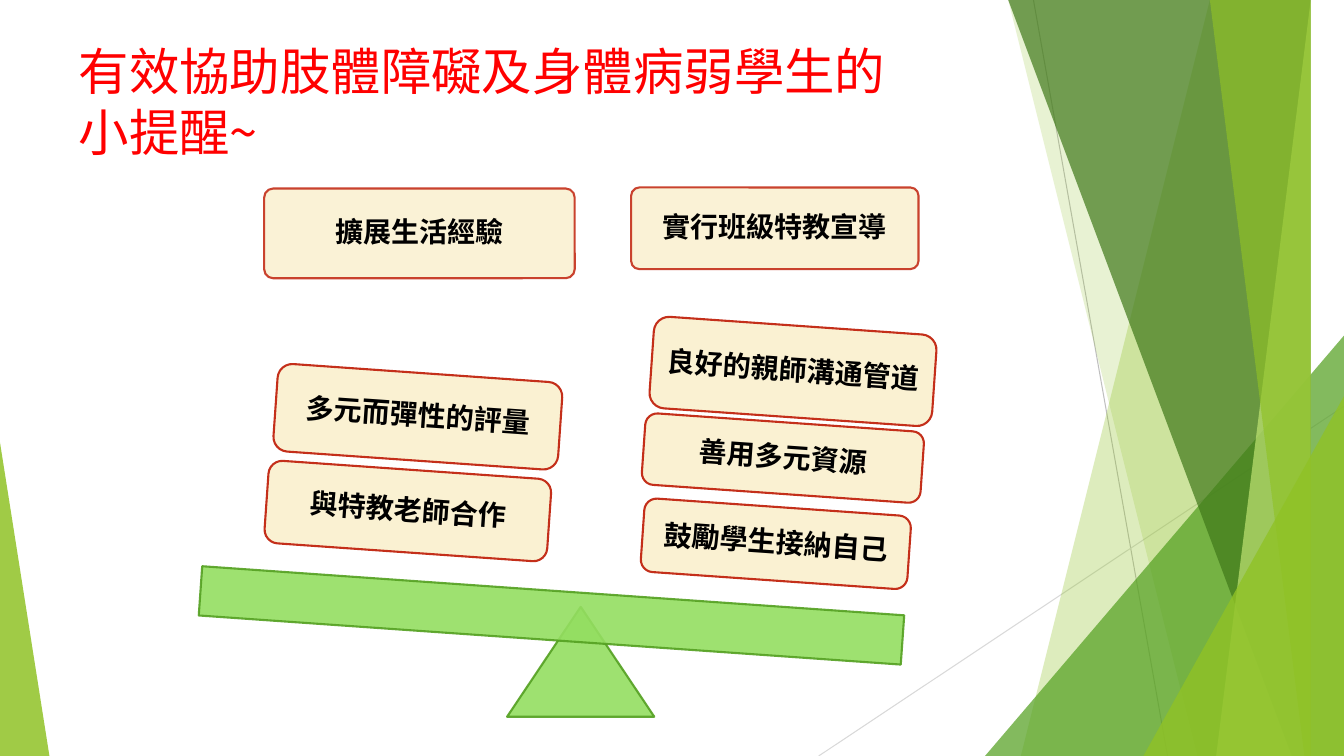
import pptx
import pptx.util
import pptx.dml.color
import pptx.enum.shapes
import pptx.enum.text
import pptx.oxml
import pptx.oxml.ns
from pptx.util import Inches

RGBColor = pptx.dml.color.RGBColor
Shape = pptx.enum.shapes.MSO_SHAPE

WHITE_GREY = RGBColor(0xD9, 0xD9, 0xD9)
GREY = RGBColor(0xBF, 0xBF, 0xBF)
LEAF = RGBColor(0x90, 0xC2, 0x26)
GRASS = RGBColor(0x54, 0xA0, 0x21)
FOREST = RGBColor(0x3F, 0x78, 0x19)
LIME = RGBColor(0xC0, 0xE4, 0x74)
SEESAW = RGBColor(0x94, 0xDE, 0x61)
CREAM = RGBColor(0xFA, 0xF1, 0xD2)
BRICK = RGBColor(0xC4, 0x2F, 0x1A)
RED = RGBColor(0xFF, 0x00, 0x00)
BLACK = RGBColor(0x00, 0x00, 0x00)

WIDTH, HEIGHT = 13.33, 7.5
TILT = 4


class SlideBuilder:
    title_font = "Noto Sans CJK SC"
    card_font = "Lato"

    def __init__(self, slide):
        self.slide = slide
        self.shapes = slide.shapes

    def set_alpha(self, fill, percent):
        """Make a solid fill see-through."""
        if percent < 100:
            color = fill._xPr.find(".//" + pptx.oxml.ns.qn("a:srgbClr"))
            alpha = pptx.oxml.parse_xml(
                f'<a:alpha {pptx.oxml.ns.nsdecls("a")} val="{percent * 1000}"/>')
            color.append(alpha)

    def paint(self, shape, fill, alpha, outline=None):
        shape.shadow.inherit = False
        shape.fill.solid()
        shape.fill.fore_color.rgb = fill
        self.set_alpha(shape.fill, alpha)
        if outline is None:
            shape.line.fill.background()
        else:
            shape.line.width = pptx.util.Pt(1.5)
            shape.line.color.rgb = outline
            self.set_alpha(shape.line.fill, alpha)
        return shape

    def hairline(self, start, end, color):
        line = self.shapes.add_connector(
            pptx.enum.shapes.MSO_CONNECTOR.STRAIGHT,
            *(Inches(value) for value in start + end))
        line.line.color.rgb = color
        line.line.width = pptx.util.Pt(0.75)
        line._element.spPr.append(pptx.oxml.parse_xml(
            f'<a:effectLst {pptx.oxml.ns.nsdecls("a")}/>'))

    def band(self, top_x, bottom_x, color, alpha):
        """Fill from a slanted left edge to the slide's right edge."""
        outline = self.shapes.build_freeform(top_x, 0, scale=Inches(1))
        outline.add_line_segments(
            [(WIDTH, 0), (WIDTH, HEIGHT), (bottom_x, HEIGHT)], close=True)
        self.paint(outline.convert_to_shape(), color, alpha)

    def block(self, kind, box, fill, alpha, outline=None, adjust=None, tilt=0):
        shape = self.shapes.add_shape(kind, *(Inches(value) for value in box))
        if adjust is not None:
            shape.adjustments[0] = adjust
        shape.rotation = tilt
        return self.paint(shape, fill, alpha, outline)

    def card(self, text, box, alpha=100, adjust=None, tilt=TILT):
        card = self.block(Shape.ROUNDED_RECTANGLE, box, CREAM, alpha, BRICK, adjust, tilt)
        frame = card.text_frame
        frame.word_wrap = True
        frame.vertical_anchor = pptx.enum.text.MSO_ANCHOR.MIDDLE
        frame.margin_left = frame.margin_right = Inches(0.1)
        frame.margin_top = frame.margin_bottom = Inches(0.1)
        paragraph = frame.paragraphs[0]
        paragraph.text = text
        paragraph.alignment = pptx.enum.text.PP_ALIGN.CENTER
        paragraph.line_spacing = 0.9
        self.style(paragraph, self.card_font, 20, BLACK, bold=True)

    def style(self, paragraph, name, size, color, bold=False):
        font = paragraph.font
        font.name = name
        font.size = pptx.util.Pt(size)
        font.bold = bold
        font.color.rgb = color

    def title(self, lines, box):
        title = self.shapes.title
        title.left, title.top, title.width, title.height = (Inches(v) for v in box)
        frame = title.text_frame
        frame.word_wrap = True
        frame.vertical_anchor = pptx.enum.text.MSO_ANCHOR.MIDDLE
        paragraph = frame.paragraphs[0]
        for index, line in enumerate(lines):
            if index:
                paragraph.add_line_break()
            paragraph.add_run().text = line
        paragraph.alignment = pptx.enum.text.PP_ALIGN.LEFT
        paragraph.line_spacing = pptx.util.Pt(43.5)
        self.style(paragraph, self.title_font, 36, RED)


def main():
    deck = pptx.Presentation()
    deck.slide_width, deck.slide_height = Inches(WIDTH), Inches(HEIGHT)
    page = SlideBuilder(deck.slides.add_slide(deck.slide_layouts[5]))

    # Green facets along the edges
    page.hairline((10.25, 0), (11.58, HEIGHT), GREY)
    page.hairline((WIDTH, 4.03), (8.12, HEIGHT), WHITE_GREY)
    page.band(12.28, 10.04, LEAF, 30)
    page.band(10.5, 11.83, LEAF, 20)
    page.block(Shape.ISOSCELES_TRIANGLE, (9.77, 3.33, 3.56, 4.17), GRASS, 72, adjust=1)
    page.band(10.21, 12.91, FOREST, 70)
    page.band(13.03, 11.92, LIME, 70)
    page.band(11.96, 13.18, LEAF, 65)
    page.block(Shape.ISOSCELES_TRIANGLE, (11.34, 3.93, 1.99, 3.57), LEAF, 80, adjust=1)
    page.block(Shape.ISOSCELES_TRIANGLE, (0, 4.39, 0.49, 3.11), LEAF, 85, adjust=0)

    # Title
    page.title(("有效協助肢體障礙及身體病弱學生的", "小提醒~"), (0.68, 0.28, 9.4, 1.44))

    # Level cards above the seesaw
    page.card("擴展生活經驗", (2.62, 1.87, 3.08, 0.89), 90, 0.1, 0)
    page.card("實行班級特教宣導", (6.26, 1.86, 2.85, 0.81), 90, 0.1, 0)

    # Seesaw
    page.block(Shape.ISOSCELES_TRIANGLE, (5.03, 6.02, 1.46, 1.09), SEESAW, 90, GRASS)
    page.block(Shape.RECTANGLE, (1.98, 5.86, 6.98, 0.49), SEESAW, 90, GRASS, tilt=TILT)

    # Tilted cards resting on it
    tilted_cards = (
        ("鼓勵學生接納自己", (6.37, 5.03, 2.65, 0.73)),
        ("善用多元資源", (6.38, 4.19, 2.77, 0.71)),
        ("良好的親師溝通管道", (6.46, 3.23, 2.81, 0.91)),
        ("與特教老師合作", (2.64, 4.66, 2.81, 0.82)),
        ("多元而彈性的評量", (2.73, 3.7, 2.83, 0.87)),
    )
    for reminder, box in tilted_cards:
        page.card(reminder, box)

    deck.save("out.pptx")


if __name__ == "__main__":
    main()
